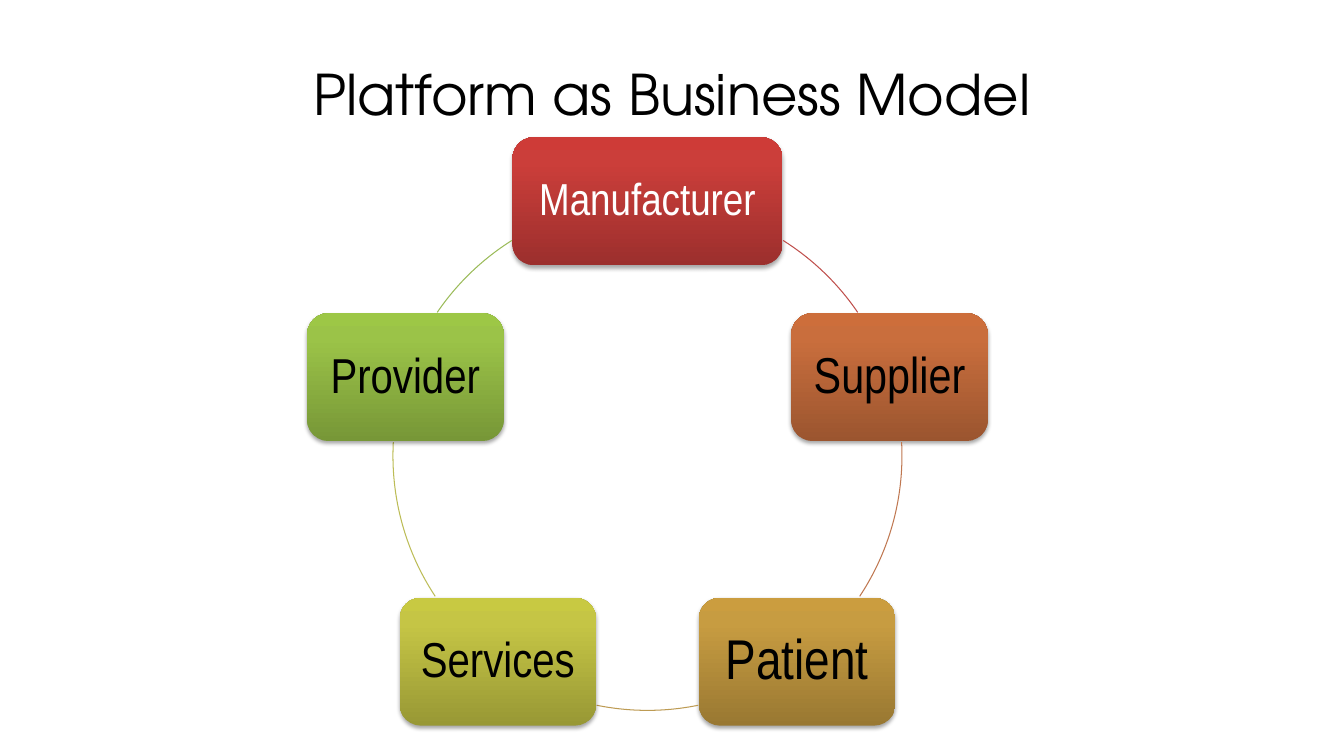
import copy
import math

from lxml import etree
from pptx import Presentation
from pptx.dml.color import RGBColor
from pptx.enum import shapes, text
from pptx.oxml import ns
from pptx.util import Pt

COLORS = {
    "black": "000000", "white": "FFFFFF",
    "red": ("9C2F2D", "CB3E3A", "CE3B37"), "red_line": "C0504D",
    "orange": ("9B552F", "C96E3D", "CD6E3B"), "orange_line": "BF7750",
    "gold": ("997832", "C79C41", "CB9D3F"), "gold_line": "BD9B53",
    "olive": ("989835", "C5C545", "C8C942"), "olive_line": "BCBC56",
    "green": ("779737", "9BC348", "9DC746"), "green_line": "9BBB59",
}
STOPS = (0, 0.8, 1)

# label, colour, text colour, font size, box width, arc start and end in degrees
ROLES = [
    ("Manufacturer", "red", "white", 32, 193, 302.2, 325.7),
    ("Supplier", "orange", "black", 36, 140.4, 356.9, 33.5),
    ("Patient", "gold", "black", 40, 140.4, 78.5, 101.5),
    ("Services", "olive", "black", 35, 140.4, 146.5, 183.1),
    ("Provider", "green", "black", 35, 140.4, 214.3, 237.8),
]
ROLE_HEIGHT = 91.4


def rgb(name):
    return RGBColor.from_string(COLORS[name])


def write_centred(sp, label, font, size, color, inset):
    tf = sp.text_frame
    tf.word_wrap = True
    tf.vertical_anchor = text.MSO_ANCHOR.MIDDLE
    tf.margin_left = tf.margin_right = Pt(inset)
    tf.margin_top = tf.margin_bottom = Pt(inset)
    p = tf.paragraphs[0]
    p.text = label
    p.alignment = text.PP_ALIGN.CENTER
    p.font.name, p.font.size = font, Pt(size)
    p.font.color.rgb = rgb(color)
    return p


def fill_gradient(sp, colors):
    """Run the colours from the bottom of the shape to its top."""
    sp.fill.gradient()
    sp.fill.gradient_angle = 90
    stops = sp._element.spPr.find(".//" + ns.qn("a:gsLst"))
    stops.append(copy.deepcopy(stops[-1]))
    for stop, position, color in zip(sp.fill.gradient_stops, STOPS, colors):
        stop.position = position
        stop.color.rgb = RGBColor.from_string(color)


def drop_shadow(sp):
    sp.shadow.inherit = False
    effects = sp._element.spPr.find(ns.qn("a:effectLst"))
    shadow = etree.SubElement(effects, ns.qn("a:outerShdw"), blurRad=str(Pt(3.1)),
                              dist=str(Pt(1.8)), dir="5400000", rotWithShape="0")
    color = etree.SubElement(shadow, ns.qn("a:srgbClr"), val=COLORS["black"])
    etree.SubElement(color, ns.qn("a:alpha"), val="35000")


def add_title(s, left, top, width, height):
    sp = s.shapes.add_textbox(Pt(left), Pt(top), Pt(width), Pt(height))
    write_centred(sp, "Platform as Business Model", "TeX Gyre Adventor", 40, "black", 4)


def add_role(s, cx, cy, width, label, color, ink, size):
    sp = s.shapes.add_shape(shapes.MSO_SHAPE.ROUNDED_RECTANGLE, Pt(cx - width / 2),
                            Pt(cy - ROLE_HEIGHT / 2), Pt(width), Pt(ROLE_HEIGHT))
    fill_gradient(sp, COLORS[color])
    sp.line.fill.background()
    drop_shadow(sp)
    p = write_centred(sp, label, "Arial Narrow", size, ink, 6)
    p.line_spacing = 0.9


def add_arc(s, left, top, diameter, start, end, color):
    sp = s.shapes.add_shape(shapes.MSO_SHAPE.ARC, Pt(left), Pt(top),
                            Pt(diameter), Pt(diameter))
    # arc angles are stored in 60000ths of a degree, adjustments in 100000ths
    for i, angle in enumerate((start, end)):
        sp.adjustments[i] = angle * 0.6
    sp.fill.background()
    sp.line.color.rgb = rgb(color)
    sp.line.width = Pt(0.75)
    sp.shadow.inherit = False


def add_cycle(s, left, top, diameter):
    """Spread the roles evenly clockwise round a circle, from its top."""
    radius = diameter / 2
    for i, (label, color, ink, size, width, start, end) in enumerate(ROLES):
        angle = math.radians(360 / len(ROLES) * i - 90)
        cx = left + radius * (1 + math.cos(angle))
        cy = top + radius * (1 + math.sin(angle))
        add_role(s, cx, cy, width, label, color, ink, size)
        add_arc(s, left, top, diameter, start, end, color + "_line")


def main():
    prs = Presentation()
    prs.slide_width, prs.slide_height = Pt(960), Pt(540)
    s = prs.slides.add_slide(prs.slide_layouts[6])
    add_title(s, 48, 21.6, 864, 90)
    add_cycle(s, 280.7, 143.8, 363.6)
    prs.save("out.pptx")


if __name__ == "__main__":
    main()
